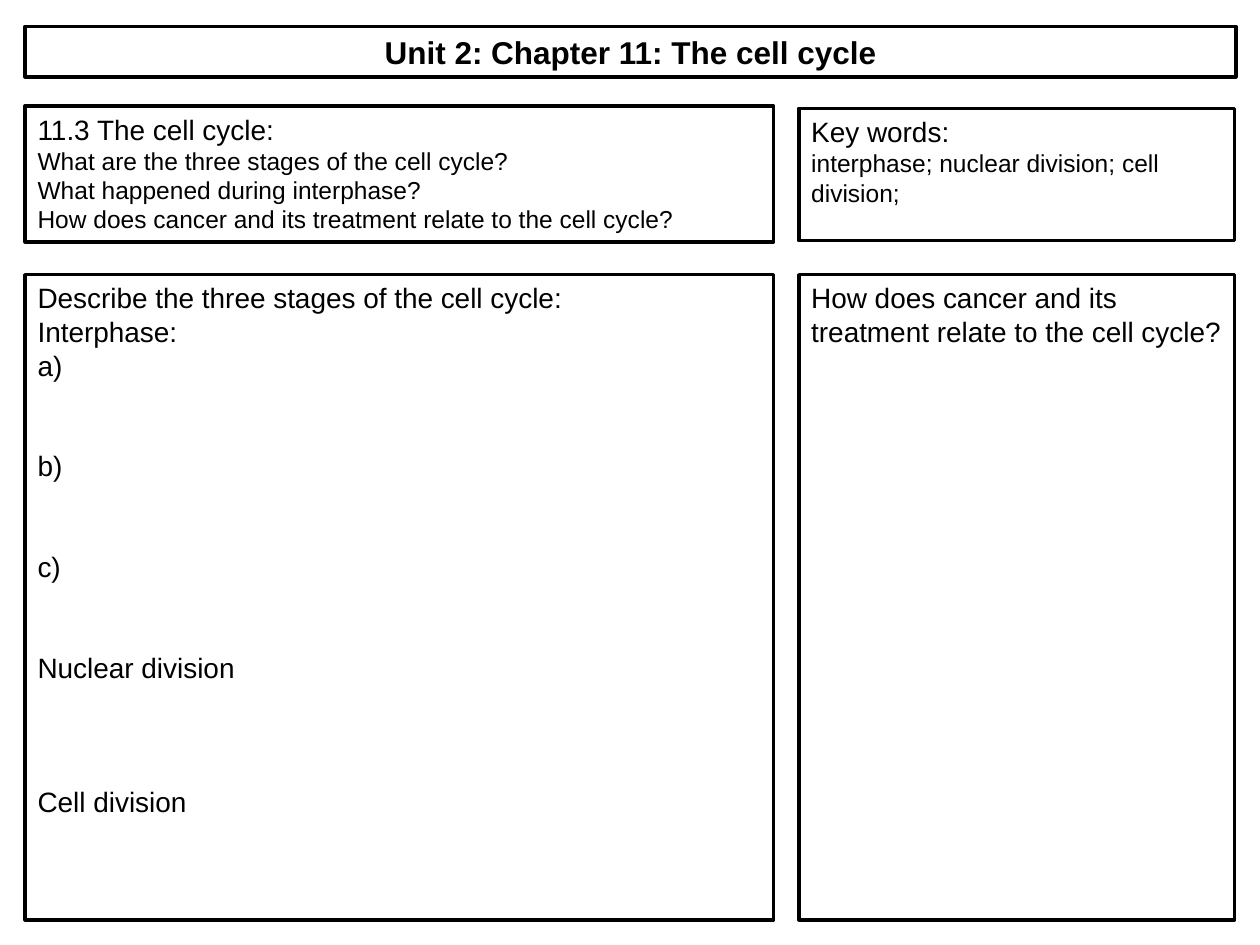
from pptx import Presentation
from pptx.dml.color import RGBColor
from pptx.enum.shapes import MSO_SHAPE
from pptx.enum.text import MSO_ANCHOR, PP_ALIGN
from pptx.util import Inches, Pt


def color(hex_value):
    return RGBColor.from_string(hex_value)


class Worksheet:
    font = "Arial"
    ink = "000000"
    paper = "FFFFFF"
    answer_line = 19.2  # height of one empty line for writing, in points

    def __init__(self, slide):
        self.slide = slide

    def box(self, left, top, width, height):
        """Add an outlined box and return its text frame."""
        box = self.slide.shapes.add_shape(
            MSO_SHAPE.RECTANGLE,
            Inches(left), Inches(top), Inches(width), Inches(height))
        box.shadow.inherit = False
        box.fill.solid()
        box.fill.fore_color.rgb = color(self.paper)
        box.line.color.rgb = color(self.ink)
        box.line.width = Pt(2)
        frame = box.text_frame
        frame.word_wrap = True
        frame.vertical_anchor = MSO_ANCHOR.TOP
        return frame

    def text(self, frame, words, size=16, bold=False, align=PP_ALIGN.LEFT,
             lines_before=0):
        """Add a paragraph, leaving empty answer lines above it."""
        first = frame.paragraphs[0]
        para = frame.add_paragraph() if first.runs else first
        para.alignment = align
        para.space_before = Pt(lines_before * self.answer_line)
        span = para.add_run()
        span.text = words
        span.font.name = self.font
        span.font.size = Pt(size)
        span.font.bold = bold
        span.font.color.rgb = color(self.ink)


def main():
    deck = Presentation()
    deck.slide_width, deck.slide_height = Inches(10), Inches(7.5)
    page = Worksheet(deck.slides.add_slide(deck.slide_layouts[6]))

    # Two columns shared by the lower rows
    left, left_width = 0.2, 5.94
    right, right_width = 6.34, 3.46
    answer_top, answer_height = 2.18, 5.12

    # Title
    title = page.box(left, 0.21, 9.61, 0.4)
    page.text(title, "Unit 2: Chapter 11: The cell cycle", 18, True,
              PP_ALIGN.CENTER)

    # Learning questions
    questions = page.box(left, 0.84, left_width, 1.08)
    page.text(questions, "11.3 The cell cycle:")
    for question in (
            "What are the three stages of the cell cycle?",
            "What happened during interphase?",
            "How does cancer and its treatment relate to the cell cycle?"):
        page.text(questions, question, 14)

    # Key words
    key_words = page.box(right, 0.86, right_width, 1.05)
    page.text(key_words, "Key words:")
    page.text(key_words, "interphase; nuclear division; cell division;", 14)

    # Stages, with room for the answers
    stages = page.box(left, answer_top, left_width, answer_height)
    for words, lines_before in (
            ("Describe the three stages of the cell cycle:", 0),
            ("Interphase:", 0),
            ("a)", 0),
            ("b)", 2),
            ("c)", 2),
            ("Nuclear division", 2),
            ("Cell division", 3)):
        page.text(stages, words, lines_before=lines_before)

    # Cancer question
    cancer = page.box(right, answer_top, right_width, answer_height)
    page.text(cancer,
              "How does cancer and its treatment relate to the cell cycle?")

    deck.save("out.pptx")


if __name__ == "__main__":
    main()
